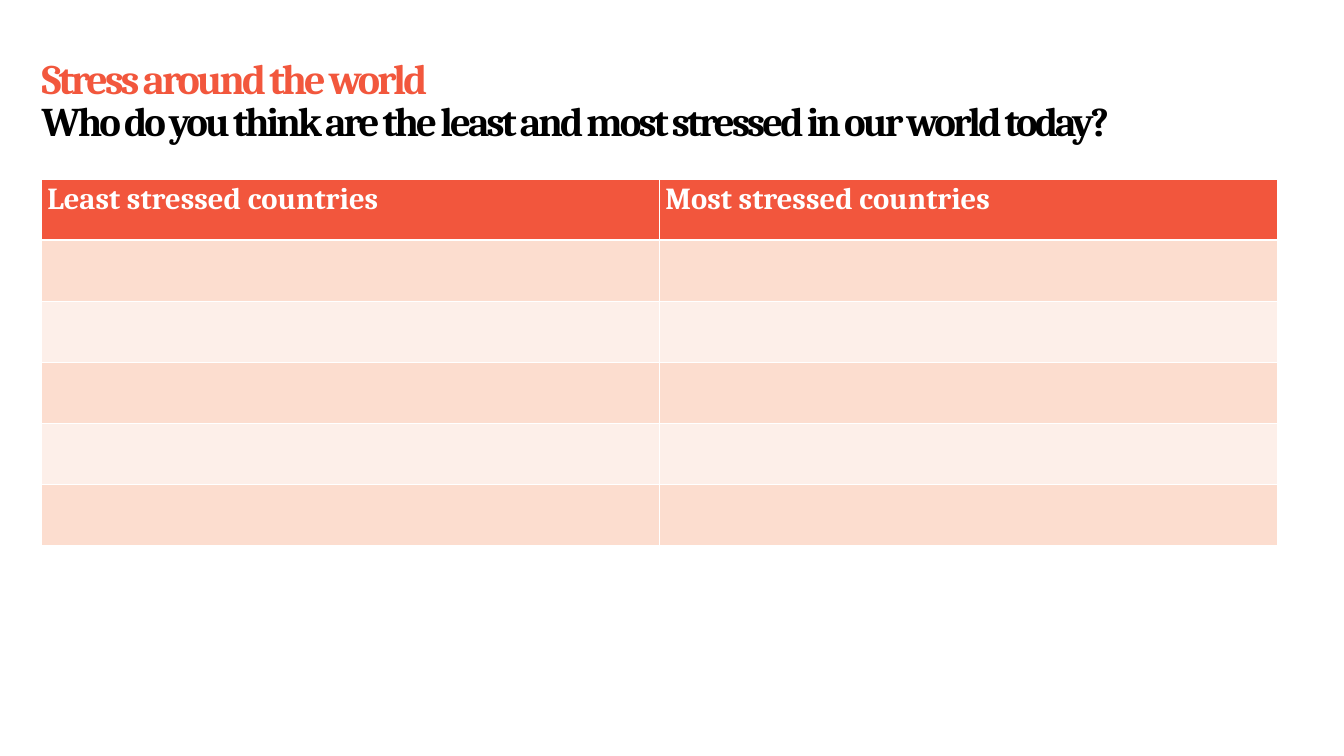
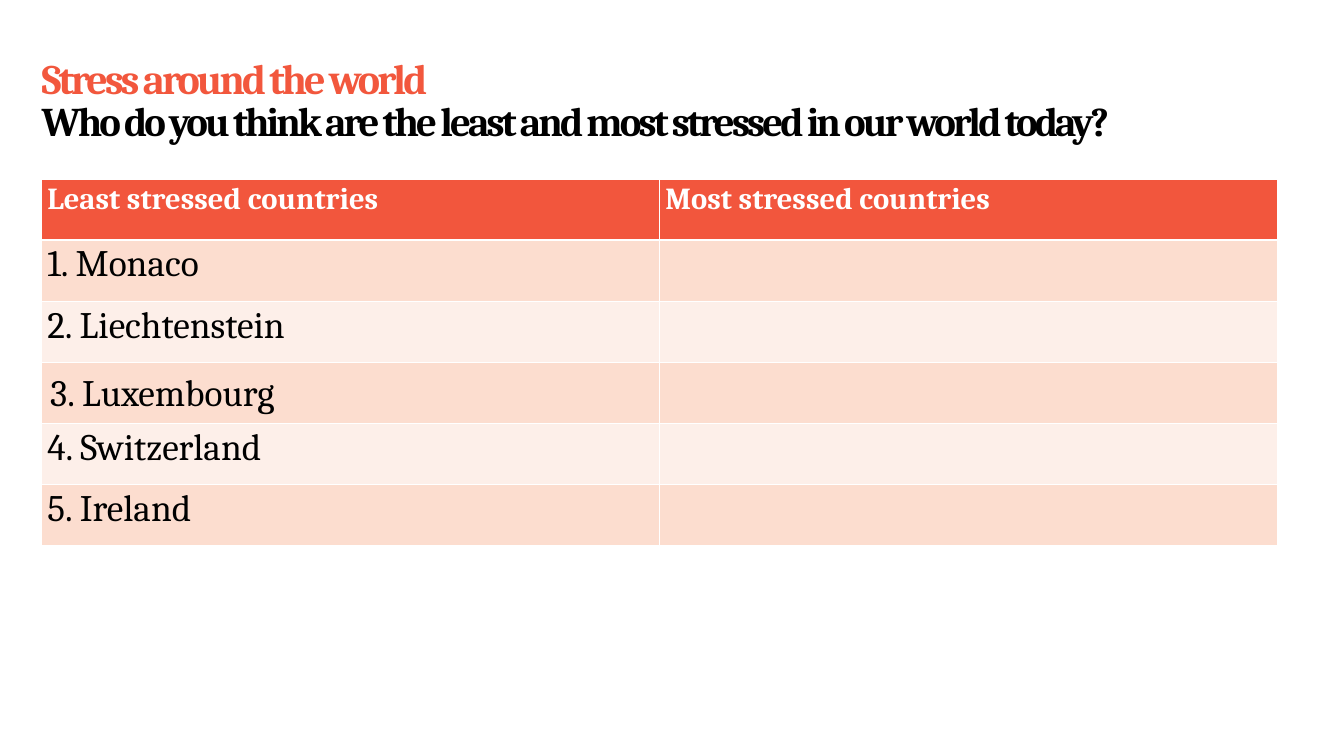
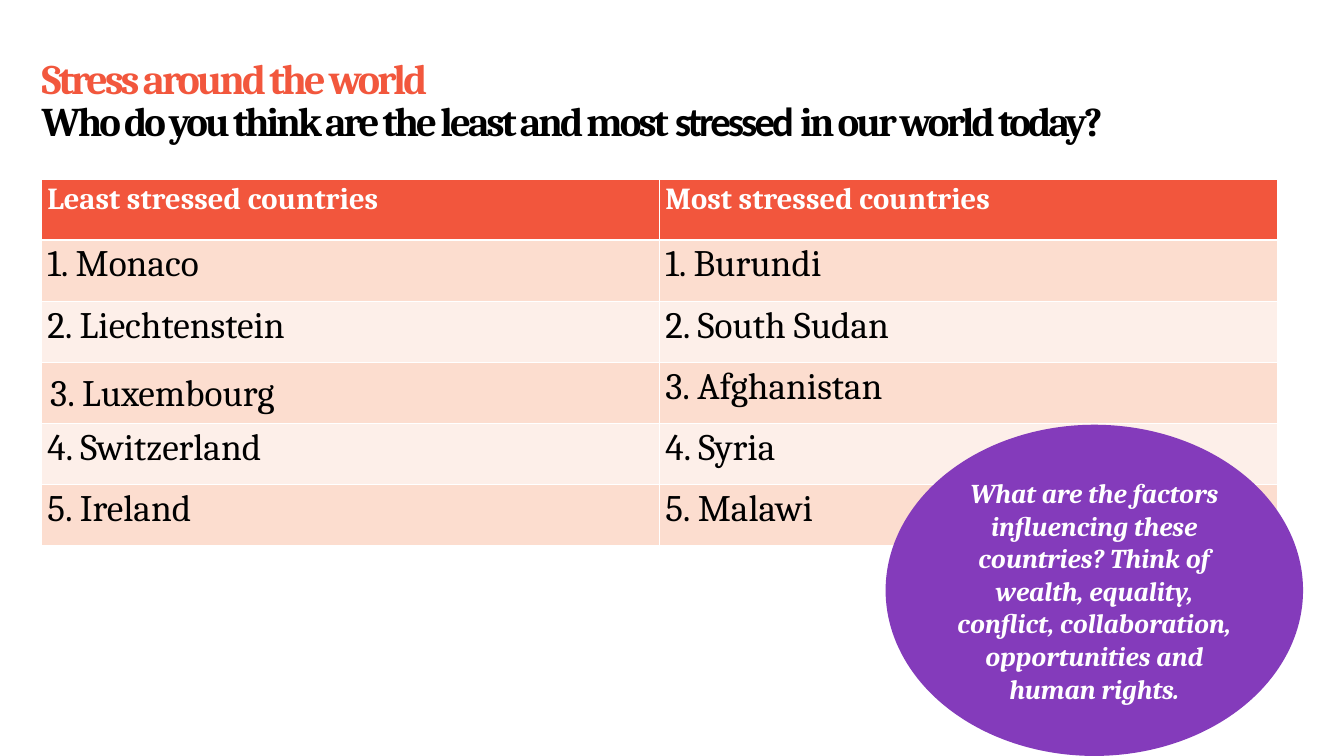
import dataclasses

import lxml.etree
import pptx
import pptx.dml.color
import pptx.enum.shapes
import pptx.enum.text
import pptx.oxml.ns
import pptx.util

Pt = pptx.util.Pt


@dataclasses.dataclass(frozen=True)
class Theme:
    coral: str = "F2573D"
    header: str = "F2563D"
    bands: tuple = ("FCDDCF", "FDEFE9")
    purple: str = "843BBB"
    white: str = "FFFFFF"
    black: str = "000000"
    font: str = "Cambria"
    alt_font: str = "Calibri"
    title_size: float = 49.5
    question_size: float = 48
    header_size: float = 36
    body_size: float = 44
    callout_size: float = 32
    title_tracking: str = "-340"


theme = Theme()


def set_font(p, size, color, bold=False, italic=False):
    p.font.name = theme.font
    p.font.size = Pt(size)
    p.font.bold = bold
    p.font.italic = italic
    p.font.color.rgb = pptx.dml.color.RGBColor.from_string(color)


def fill_cell(cell, color, top, bottom):
    cell.fill.solid()
    cell.fill.fore_color.rgb = pptx.dml.color.RGBColor.from_string(color)
    tc_pr = cell._tc.get_or_add_tcPr()
    widths = {"a:lnL": 1, "a:lnR": 1, "a:lnT": top, "a:lnB": bottom}
    for i, (tag, width) in enumerate(widths.items()):
        ln = lxml.etree.Element(pptx.oxml.ns.qn(tag), w=str(Pt(width)))
        solid = lxml.etree.SubElement(ln, pptx.oxml.ns.qn("a:solidFill"))
        lxml.etree.SubElement(solid, pptx.oxml.ns.qn("a:srgbClr"), val=theme.white)
        tc_pr.insert(i, ln)


heading = "Stress around the world"
question = "Who do you think are the least and most stressed in our world today?"
split_question = [
    "Who do you think are the least and most ",
    "stressed",
    " in our world today?",
]
headers = ["Least stressed countries", "Most stressed countries"]
least = ["Monaco", "Liechtenstein", "Luxembourg", "Switzerland", "Ireland"]
most = ["Burundi", "South Sudan", "Afghanistan", "Syria", "Malawi"]
callout = (
    "What are the factors influencing these countries? Think of wealth, equality, "
    "conflict, collaboration, opportunities and human rights."
)
slides = [
    ([question], [], ""),
    ([question], [least], ""),
    (split_question, [least, most], callout),
]

prs = pptx.Presentation()
prs.slide_width = Pt(1583.28)
prs.slide_height = Pt(890.64)

for question_runs, columns, callout_text in slides:
    s = prs.slides.add_slide(prs.slide_layouts[6])

    sp = s.shapes.add_textbox(Pt(49), Pt(61), Pt(1485), Pt(112))
    tf = sp.text_frame
    tf.word_wrap = True
    tf.margin_left = tf.margin_right = tf.margin_bottom = 0
    tf.margin_top = Pt(10.8)
    title_lines = [
        ([heading], theme.title_size, theme.coral),
        (question_runs, theme.question_size, theme.black),
    ]
    for i, (texts, size, color) in enumerate(title_lines):
        p = tf.add_paragraph() if i else tf.paragraphs[0]
        p.line_spacing = Pt(theme.title_size)
        set_font(p, size, color, bold=True)
        for text in texts:
            r = p.add_run()
            r.text = text
            r._r.get_or_add_rPr().set("spc", theme.title_tracking)
            if text == "stressed":
                r.font.name = theme.alt_font

    table = s.shapes.add_table(6, 2, Pt(48.5), Pt(211), Pt(1456), Pt(432)).table
    for col, text in enumerate(headers):
        cell = table.cell(0, col)
        fill_cell(cell, theme.header, 1, 3)
        p = cell.text_frame.paragraphs[0]
        p.text = text
        set_font(p, theme.header_size, theme.white, bold=True)
        for row in range(1, 6):
            band = theme.bands[(row - 1) % 2]
            fill_cell(table.cell(row, col), band, 3 if row == 1 else 1, 1)

    for col, countries in enumerate(columns):
        for rank, country in enumerate(countries, 1):
            cell = table.cell(rank, col)
            p = cell.text_frame.paragraphs[0]
            p.text = f"{rank}. {country}"
            if country == "Luxembourg":
                cell.vertical_anchor = pptx.enum.text.MSO_ANCHOR.MIDDLE
                cell.margin_left = Pt(10.5)
                cell.margin_right = cell.margin_top = cell.margin_bottom = Pt(0.72)
                p.line_spacing = 1.07
                p.space_after = Pt(8)
            set_font(p, theme.body_size, theme.black)

    if callout_text:
        sp = s.shapes.add_shape(
            pptx.enum.shapes.MSO_SHAPE.OVAL, Pt(1043.3), Pt(500.4), Pt(491.8), Pt(390.2)
        )
        sp.shadow.inherit = False
        sp.fill.solid()
        sp.fill.fore_color.rgb = pptx.dml.color.RGBColor.from_string(theme.purple)
        sp.line.fill.background()
        tf = sp.text_frame
        tf.word_wrap = True
        tf.vertical_anchor = pptx.enum.text.MSO_ANCHOR.MIDDLE
        p = tf.paragraphs[0]
        p.text = callout_text
        p.alignment = pptx.enum.text.PP_ALIGN.CENTER
        set_font(p, theme.callout_size, theme.white, bold=True, italic=True)

prs.save("out.pptx")
